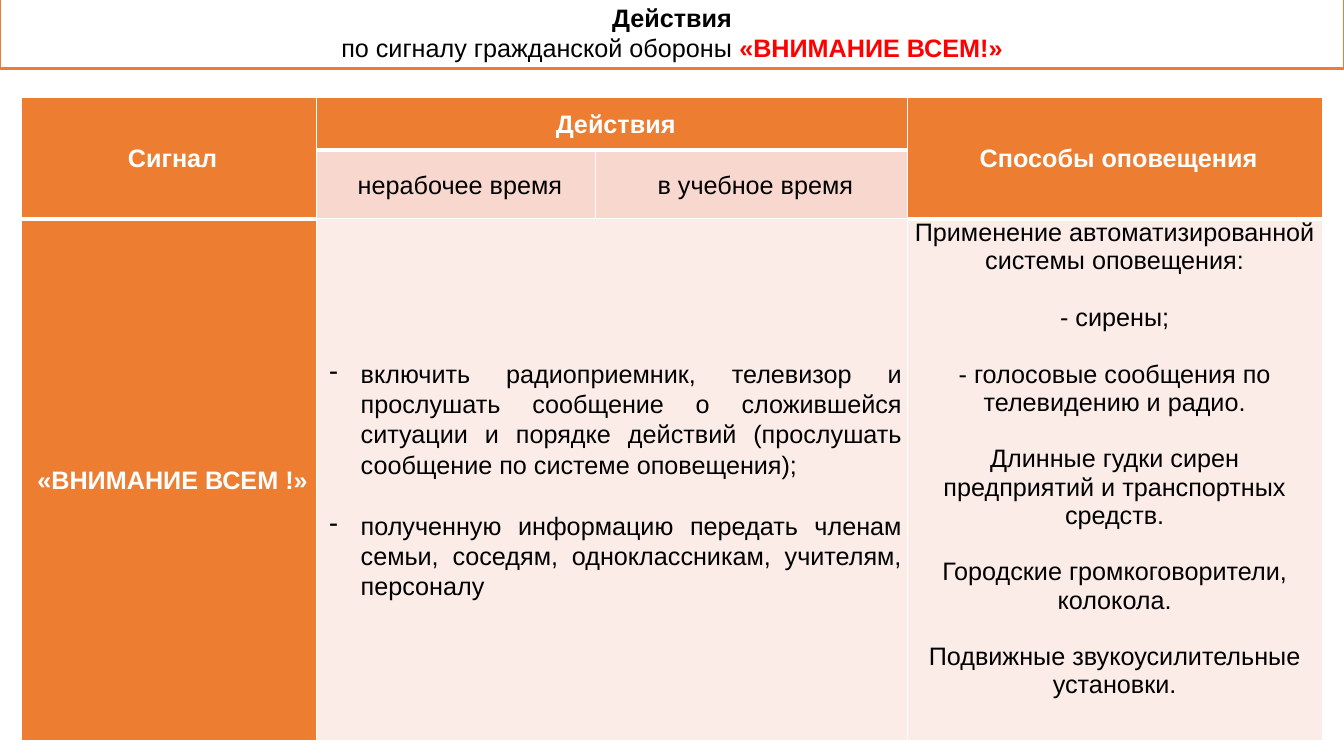
from lxml.etree import SubElement
from pptx import Presentation
from pptx.dml.color import RGBColor
from pptx.enum.text import MSO_ANCHOR as Anchor, MSO_AUTO_SIZE as AutoSize, PP_ALIGN as Align
from pptx.oxml.ns import qn
from pptx.util import Cm, Pt

ORANGE, PINK, PALE = "ED7D31", "F8D7CE", "FCECE8"
WHITE, BLACK, RED = "FFFFFF", "000000", "FF0000"
COLUMNS = (7.44, 7.04, 7.85, 10.46)
ROWS = (1.32, 1.73, 13.16)
THICK_EDGES = {(1, 1), (1, 2), (2, 0), (2, 3)}
ACTIONS = (
    "включить радиоприемник, телевизор и прослушать сообщение о сложившейся "
    "ситуации и порядке действий (прослушать сообщение по системе оповещения);",
    "полученную информацию передать членам семьи, соседям, одноклассникам, "
    "учителям, персоналу",
)
WARNING_MEANS = (
    "Применение автоматизированной системы оповещения:",
    "- сирены;",
    "- голосовые сообщения по телевидению и радио.",
    "Длинные гудки сирен предприятий и транспортных средств.",
    "Городские громкоговорители, колокола.",
    "Подвижные звукоусилительные установки.",
)


def rgb(code):
    """Turn a hex string into a colour."""
    return RGBColor.from_string(code)


def paint(target, code):
    """Give a shape or cell a solid fill."""
    target.fill.solid()
    target.fill.fore_color.rgb = rgb(code)


def add_run(paragraph, text, color=BLACK, bold=False):
    """Append one formatted run."""
    run = paragraph.add_run()
    run.text = text
    run.font.name, run.font.size, run.font.bold = "Arial", Pt(18), bold
    run.font.color.rgb = rgb(color)


def paragraphs(frame, count, gap=0):
    """Yield the paragraphs of a frame, spaced apart by a gap in points."""
    for index in range(count):
        paragraph = frame.add_paragraph() if index else frame.paragraphs[0]
        paragraph.space_before = Pt(gap if index else 0)
        yield paragraph


def set_indent(paragraph, margin, hanging=0):
    """Set the left margin and first-line indent in centimetres."""
    properties = paragraph._p.get_or_add_pPr()
    properties.set("marL", str(Cm(margin)))
    properties.set("indent", str(Cm(-hanging)))
    return properties


def set_borders(cell, row, column):
    """Draw white cell borders, thicker below the headings."""
    edges = {"L": None, "R": None, "T": (row, column),
             "B": (row + cell.span_height, column)}
    for side, edge in edges.items():
        width = 3 if edge in THICK_EDGES else 1
        line = SubElement(cell._tc.get_or_add_tcPr(), qn(f"a:ln{side}"), w=str(Pt(width)))
        fill = SubElement(line, qn("a:solidFill"))
        SubElement(fill, qn("a:srgbClr"), val=WHITE)


def add_heading(slide):
    """Fill the framed title across the top."""
    heading = slide.shapes.title
    heading.left, heading.top = Cm(0), Cm(-0.08)
    heading.width, heading.height = Cm(33.87), Cm(1.8)
    paint(heading, WHITE)
    white = heading.fill._xPr.find(qn("a:solidFill"))[0]
    SubElement(white, qn("a:alpha"), val="50000")
    heading.line.color.rgb, heading.line.width = rgb(ORANGE), Pt(2)
    frame = heading.text_frame
    frame.word_wrap, frame.auto_size = True, AutoSize.NONE
    frame.vertical_anchor = Anchor.MIDDLE
    first, second = paragraphs(frame, 2)
    first.alignment = second.alignment = Align.CENTER
    add_run(first, "Действия", bold=True)
    add_run(second, "по сигналу гражданской обороны ")
    add_run(second, "«ВНИМАНИЕ ВСЕМ!»", RED, True)


def add_grid(slide):
    """Add the table with its merged cells and borders."""
    grid = slide.shapes.add_table(len(ROWS), len(COLUMNS), Cm(0.53), Cm(2.46),
                                  Cm(sum(COLUMNS)), Cm(sum(ROWS))).table
    grid.horz_banding = False
    for column, width in zip(grid.columns, COLUMNS):
        column.width = Cm(width)
    for row, height in zip(grid.rows, ROWS):
        row.height = Cm(height)
    for start, end in (((0, 0), (1, 0)), ((0, 1), (0, 2)),
                       ((0, 3), (1, 3)), ((2, 1), (2, 2))):
        grid.cell(*start).merge(grid.cell(*end))
    for row in range(len(ROWS)):
        for column in range(len(COLUMNS)):
            cell = grid.cell(row, column)
            set_borders(cell, row, column)
            cell.margin_left = cell.margin_right = Cm(0.13)
            cell.margin_top = cell.margin_bottom = 0
            cell.vertical_anchor = Anchor.MIDDLE
            paint(cell, PALE if row == 2 else ORANGE)
    return grid


def fill_label(cell, text, fill=ORANGE, color=WHITE, bold=True):
    """Write a centred heading into a cell."""
    paint(cell, fill)
    label = cell.text_frame.paragraphs[0]
    set_indent(label, 0.2)
    label.alignment, label.line_spacing = Align.CENTER, 1.07
    add_run(label, text, color, bold)


def fill_actions(cell):
    """Write the dashed list of actions."""
    for item, text in zip(paragraphs(cell.text_frame, len(ACTIONS), 22), ACTIONS):
        SubElement(set_indent(item, 0.99, 0.79), qn("a:buChar"), char="-")
        item.alignment, item.line_spacing = Align.JUSTIFY, 1.07
        add_run(item, text)


def fill_means(cell):
    """Write the centred means of warning."""
    cell.vertical_anchor = Anchor.TOP
    for item, text in zip(paragraphs(cell.text_frame, len(WARNING_MEANS), 20.3), WARNING_MEANS):
        item.alignment = Align.CENTER
        add_run(item, text)


def main():
    """Build and save the slide."""
    deck = Presentation()
    deck.slide_width, deck.slide_height = Cm(33.87), Cm(19.05)
    slide = deck.slides.add_slide(deck.slide_layouts[5])
    add_heading(slide)
    grid = add_grid(slide)
    fill_label(grid.cell(0, 0), "Сигнал")
    fill_label(grid.cell(0, 1), "Действия")
    fill_label(grid.cell(0, 3), "Способы оповещения")
    fill_label(grid.cell(1, 1), "нерабочее время", PINK, BLACK, False)
    fill_label(grid.cell(1, 2), "в учебное время", PINK, BLACK, False)
    fill_label(grid.cell(2, 0), "«ВНИМАНИЕ ВСЕМ !»")
    fill_actions(grid.cell(2, 1))
    fill_means(grid.cell(2, 3))
    deck.save("out.pptx")


if __name__ == "__main__":
    main()
